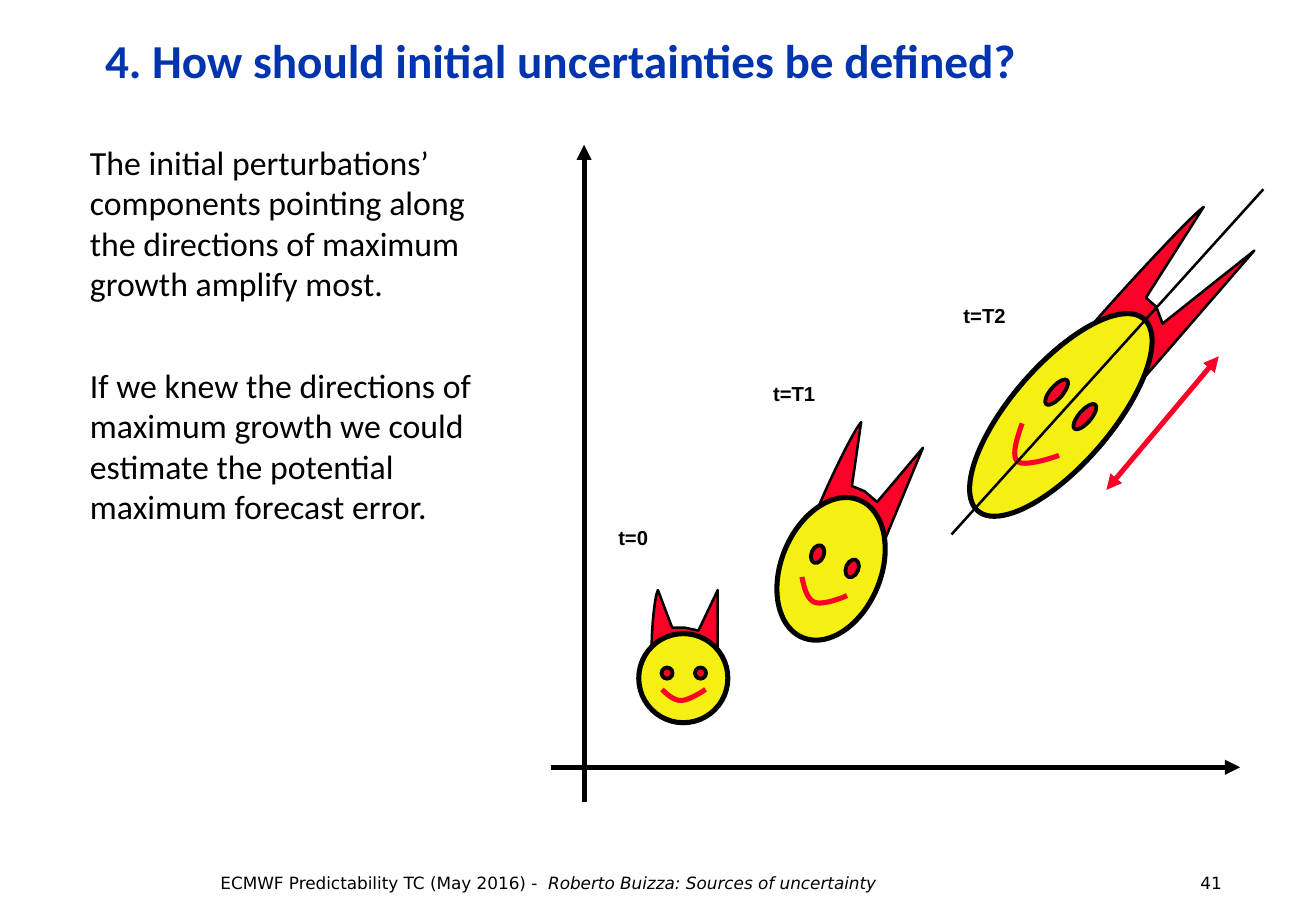
import math
from lxml import etree
from pptx import Presentation
from pptx import util as u
from pptx.dml.color import RGBColor
from pptx.enum import shapes, text
from pptx.oxml.ns import qn

PX = 7620  # 120 px to the inch
WIDE, HIGH = 1300, 900
BLACK, RED, YELLOW, BLUE = "000000", "FC0128", "F5F011", "0234AD"

TITLE = "4. How should initial uncertainties be defined?"
BODY = [
    "The initial perturbations’ components pointing along the directions of maximum growth amplify most.",
    "If we knew the directions of maximum growth we could estimate the potential maximum forecast error.",
]
FOOTER = [("ECMWF Predictability TC (May 2016) -  ", False),
          ("Roberto Buizza: Sources of uncertainty", True), ("\t41", False)]
PAGE_TAB = 968

# Face at t=0, in px from the centre of the head; six numbers make a curve
HEAD = (0, 0, 88)
EYES = [(-16, -5, 11), (17, -5, 11)]
HORNS = [(-31, -27), (-32, -37, -29, -80, -25, -87), (-11, -50), (1, -50), (15, -47),
         (34, -87), (34, -26), (29, -34), (5, -39), (-13, -35)]
MOUTH = [(-21, 11), (-15, 17, -9, 22, -2, 22), (5, 22, 18, 14, 22, 11)]

# Centre, stretch across and along, turn in degrees
FACES = [((675, 670), (1, 1), 0),
         ((821, 562), (1.12, 1.67), 22.5),
         ((1048, 410), (1.12, 2.85), 40.9)]
LABELS = [("t=0", 599, 484), ("t=T1", 752, 341), ("t=T2", 940, 264)]

# From, to, colour, points, arrowheads
AXES = [((577, 792), (577, 143), BLACK, 3, ["tailEnd"]),
        ((544, 758), (1225, 758), BLACK, 3, ["tailEnd"])]
GROWTH = [((940, 528), (1248, 187), BLACK, 1.5, []),
          ((1093, 484), (1204, 352), RED, 3, ["headEnd", "tailEnd"])]


def px(n):
    return round(n * PX)


def color(code):
    return RGBColor.from_string(code)


def paint(shape, fill, line, width):
    shape.shadow.inherit = False
    if fill:
        shape.fill.solid()
        shape.fill.fore_color.rgb = color(fill)
    else:
        shape.fill.background()
    shape.line.color.rgb = color(line)
    shape.line.width = u.Pt(width)


def turn(x, y, face):
    """Stretch and turn a point of the first face to its place on another."""
    (cx, cy), (sx, sy), angle = face
    a = math.radians(angle)
    x, y = x * sx, y * sy
    return cx + x * math.cos(a) - y * math.sin(a), cy + x * math.sin(a) + y * math.cos(a)


def trace(steps, count=12):
    """Turn corners and cubic curves into a list of points."""
    points = []
    for step in steps:
        if len(step) == 2:
            points.append(step)
            continue
        start = points[-1]
        for i in range(1, count + 1):
            t = i / count
            s = 1 - t
            points.append(tuple(
                s**3 * start[k] + 3 * s * s * t * step[k]
                + 3 * s * t * t * step[k + 2] + t**3 * step[k + 4] for k in (0, 1)))
    return points


def outline(slide, steps, face, fill, line, width):
    points = [tuple(px(n) for n in turn(x, y, face)) for x, y in trace(steps)]
    path = slide.shapes.build_freeform(*points[0], scale=1.0)
    path.add_line_segments(points[1:], close=bool(fill))
    paint(path.convert_to_shape(), fill, line, width)


def oval(slide, spot, face, fill, width):
    x, y, size = spot
    cx, cy = turn(x, y, face)
    w, h = (size * s for s in face[1])
    shape = slide.shapes.add_shape(shapes.MSO_SHAPE.OVAL, px(cx - w / 2), px(cy - h / 2), px(w), px(h))
    shape.rotation = face[2]
    paint(shape, fill, BLACK, width)


def devil(slide, face):
    outline(slide, HORNS, face, RED, BLACK, 1.5)
    oval(slide, HEAD, face, YELLOW, 3)
    for eye in EYES:
        oval(slide, eye, face, RED, 2.25)
    outline(slide, MOUTH, face, None, RED, 3)


def line(slide, start, end, code, width, heads):
    link = slide.shapes.add_connector(
        shapes.MSO_CONNECTOR.STRAIGHT, *(px(n) for n in start + end))
    link.line.color.rgb = color(code)
    link.line.width = u.Pt(width)
    ln = link.line._get_or_add_ln()
    for head in heads:
        etree.SubElement(ln, qn("a:" + head), type="triangle")
    etree.SubElement(link._element.spPr, qn("a:effectLst"))


def frame(slide, x, y, w, h, wrap=True):
    tf = slide.shapes.add_textbox(px(x), px(y), px(w), px(h)).text_frame
    tf.word_wrap = wrap
    return tf


def write(para, words, font, size, code=BLACK, bold=False, italic=False):
    run = para.add_run()
    run.text = words
    run.font.name, run.font.size = font, u.Pt(size)
    run.font.bold, run.font.italic = bold, italic
    run.font.color.rgb = color(code)


def main():
    deck = Presentation()
    deck.slide_width, deck.slide_height = px(WIDE), px(HIGH)
    slide = deck.slides.add_slide(deck.slide_layouts[6])

    para = frame(slide, 206, 856, 1081, 32).paragraphs[0]
    tabs = etree.SubElement(para._p.get_or_add_pPr(), qn("a:tabLst"))
    etree.SubElement(tabs, qn("a:tab"), pos=str(px(PAGE_TAB)), algn="l")
    for words, italic in FOOTER:
        write(para, words, "DejaVu Sans", 10, italic=italic)

    tf = frame(slide, 92, 20, 1190, 80)
    tf.vertical_anchor = text.MSO_ANCHOR.MIDDLE
    tf.paragraphs[0].line_spacing = u.Pt(32)
    write(tf.paragraphs[0], TITLE, "Calibri", 28, BLUE, bold=True)

    tf = frame(slide, 77, 134, 402, 640)
    for i, words in enumerate(BODY):
        para = tf.add_paragraph() if i else tf.paragraphs[0]
        if i:
            para.space_before = u.Pt(36)
        write(para, words, "Calibri", 20)

    for axis in AXES:
        line(slide, *axis)
    for face in FACES:
        devil(slide, face)
    for arrow in GROWTH:
        line(slide, *arrow)
    for words, x, y in LABELS:
        para = frame(slide, x, y, 72, 83, wrap=False).paragraphs[0]
        para.line_spacing = u.Pt(32)
        write(para, words, "Arial", 12, bold=True)

    deck.save("out.pptx")


if __name__ == "__main__":
    main()
